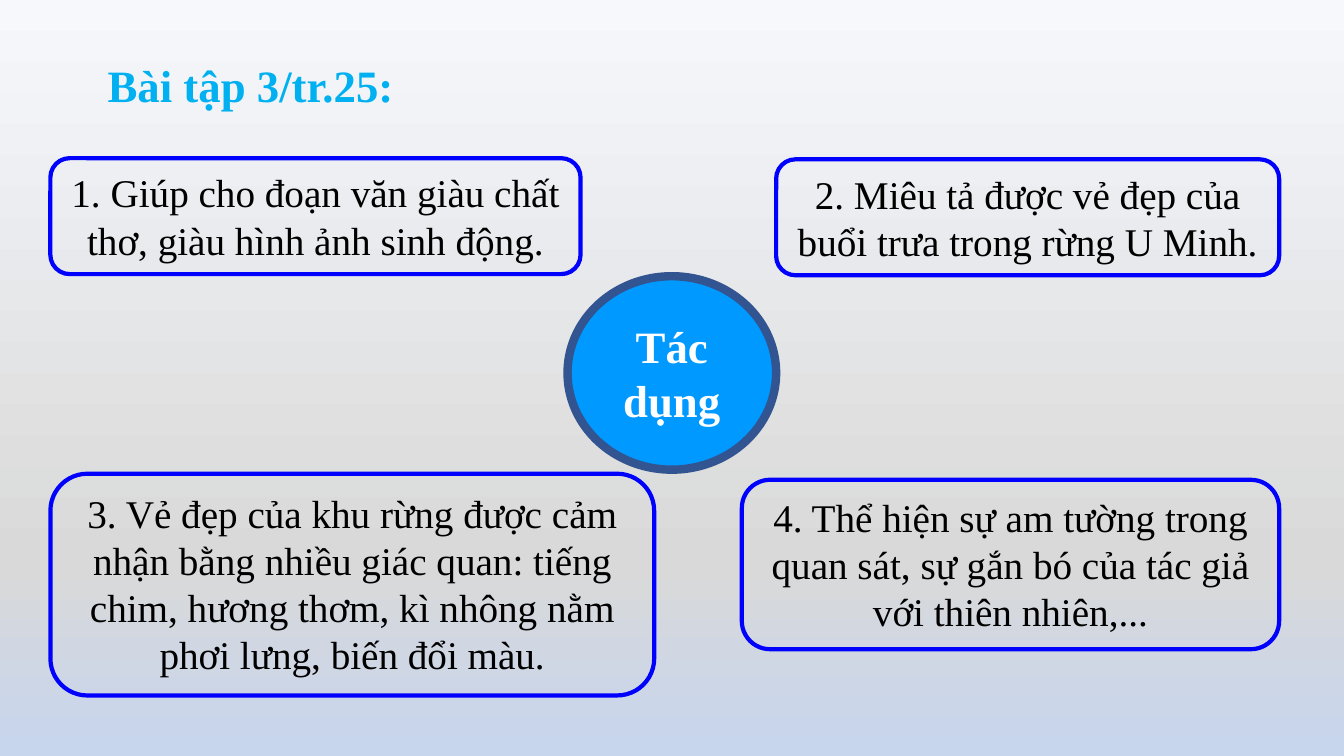
"""Build a slide with four effects of a passage arranged around a central circle."""
from copy import deepcopy

from pptx import Presentation
from pptx.dml.color import RGBColor
from pptx.enum.shapes import MSO_SHAPE as Shape
from pptx.enum.text import MSO_ANCHOR as Anchor, MSO_AUTO_SIZE as AutoSize, PP_ALIGN as Align
from pptx.oxml.ns import qn
from pptx.util import Pt

FONT = "Times New Roman"
BLACK = RGBColor(0x00, 0x00, 0x00)
WHITE = RGBColor(0xFF, 0xFF, 0xFF)
SKY = RGBColor(0x00, 0xB0, 0xF0)
BLUE = RGBColor(0x00, 0x00, 0xFF)
AZURE = RGBColor(0x00, 0x99, 0xFF)
NAVY = RGBColor(0x32, 0x54, 0x91)
BACKGROUND_STOPS = [
    (0, RGBColor(0xF6, 0xF8, 0xFC)),
    (0.74, RGBColor(0xD9, 0xD9, 0xD9)),
    (1, RGBColor(0xC7, 0xD5, 0xED)),
]

TITLE = "Bài tập 3/tr.25:"
CENTER = "Tác dụng"
LEFT_EDGE, RIGHT_EDGE = 36, 913.7
EFFECTS = [
    ("1. Giúp cho đoạn văn giàu chất thơ, giàu hình ảnh sinh động.", "left", 113, 378.7, 82.8),
    ("2. Miêu tả được vẻ đẹp của buổi trưa trong rừng U Minh.", "right", 113.8, 359.3, 82.8),
    ("3. Vẻ đẹp của khu rừng được cảm nhận bằng nhiều giác quan: tiếng chim, "
     "hương thơm, kì nhông nằm phơi lưng, biến đổi màu.", "left", 338.4, 431.3, 158.4),
    ("4. Thể hiện sự am tường trong quan sát, sự gắn bó của tác giả "
     "với thiên nhiên,...", "right", 342.7, 383.8, 121),
]


def paint_background(slide):
    fill = slide.background.fill
    fill.gradient()
    fill.gradient_angle = 270
    stop_list = slide.element.find(".//" + qn("a:gsLst"))
    stop_list.append(deepcopy(stop_list[-1]))
    for stop, (position, color) in zip(fill.gradient_stops, BACKGROUND_STOPS):
        stop.position = position
        stop.color.rgb = color


def write(shape, text, size, color, bold=False, align=Align.CENTER, anchor=Anchor.TOP):
    frame = shape.text_frame
    frame.word_wrap = True
    frame.vertical_anchor = anchor
    paragraph = frame.paragraphs[0]
    paragraph.text = text
    paragraph.alignment = align
    font = paragraph.font
    font.name, font.size, font.bold = FONT, Pt(size), bold
    font.color.rgb = color
    return frame


def add_outlined(slide, kind, box, line_color, line_width):
    shape = slide.shapes.add_shape(kind, *map(Pt, box))
    shape.shadow.inherit = False
    shape.fill.background()
    shape.line.color.rgb = line_color
    shape.line.width = Pt(line_width)
    return shape


def main():
    presentation = Presentation()
    presentation.slide_width, presentation.slide_height = Pt(960), Pt(540)
    slide = presentation.slides.add_slide(presentation.slide_layouts[6])
    paint_background(slide)

    title = slide.shapes.add_textbox(Pt(69.8), Pt(18.7), Pt(224), Pt(58.3))
    frame = write(title, TITLE, 32, SKY, bold=True, align=Align.JUSTIFY)
    frame.paragraphs[0].line_spacing = 1.5
    frame.auto_size = AutoSize.SHAPE_TO_FIT_TEXT

    circle = add_outlined(slide, Shape.OVAL, (405.4, 197.3, 149, 138.2), NAVY, 6)
    circle.fill.solid()
    circle.fill.fore_color.rgb = AZURE
    write(circle, CENTER, 32, WHITE, bold=True, anchor=Anchor.MIDDLE)

    for text, side, top, width, height in EFFECTS:
        left = LEFT_EDGE if side == "left" else RIGHT_EDGE - width
        effect = add_outlined(slide, Shape.ROUNDED_RECTANGLE, (left, top, width, height), BLUE, 3)
        write(effect, text, 28, BLACK).auto_size = AutoSize.SHAPE_TO_FIT_TEXT

    presentation.save("out.pptx")


if __name__ == "__main__":
    main()
